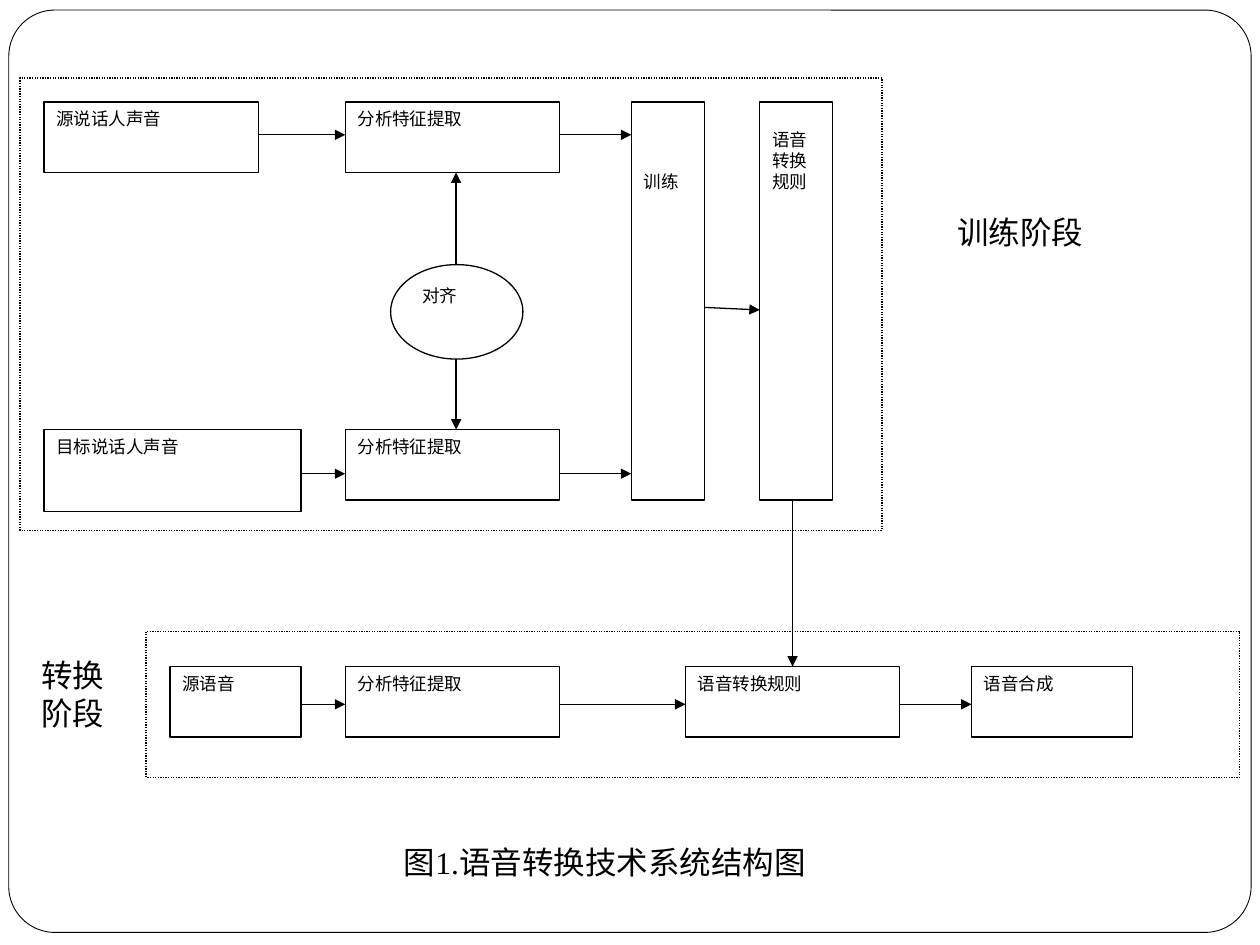
from typing import NamedTuple

from lxml import etree
from pptx import Presentation
from pptx.dml.color import RGBColor
from pptx.enum.dml import MSO_LINE
from pptx.enum.shapes import MSO_CONNECTOR, MSO_SHAPE
from pptx.enum.text import MSO_ANCHOR, MSO_AUTO_SIZE, PP_ALIGN
from pptx.oxml.ns import qn
from pptx.util import Inches, Pt

RECTANGLE = MSO_SHAPE.RECTANGLE
ROUNDED = MSO_SHAPE.ROUNDED_RECTANGLE
OVAL = MSO_SHAPE.OVAL
STRAIGHT = MSO_CONNECTOR.STRAIGHT
DOTTED = MSO_LINE.ROUND_DOT
TOP = MSO_ANCHOR.TOP
GROW = MSO_AUTO_SIZE.SHAPE_TO_FIT_TEXT
LEFT, CENTER, JUSTIFY = PP_ALIGN.LEFT, PP_ALIGN.CENTER, PP_ALIGN.JUSTIFY

BLACK = "000000"
WHITE = "FFFFFF"
BOX_WIDTH = 1.7
BOX_HEIGHT = 0.56
COLUMN_WIDTH = 0.58
COLUMN_HEIGHT = 3.16
SOURCE_TOP, TARGET_TOP, CONVERSION_TOP = 0.81, 3.41, 5.29
SOURCE_FLOW, TARGET_FLOW, CONVERSION_FLOW = 1.07, 3.76, 5.59
START_LEFT, ANALYSIS_LEFT = 0.35, 2.74
TRAINING_LEFT, RULES_LEFT = 5.01, 6.03
CONVERT_LEFT, SYNTHESIS_LEFT = 5.44, 7.71
ANALYSIS_RIGHT = ANALYSIS_LEFT + BOX_WIDTH
ALIGN_X, RULES_X = 3.62, 6.29
LINE_STEP = 0.167


class Step(NamedTuple):
    text: str
    left: float
    top: float
    width: float = BOX_WIDTH
    height: float = BOX_HEIGHT
    kind: int = RECTANGLE
    lines_down: int = 0


class Flow(NamedTuple):
    x1: float
    y1: float
    x2: float
    y2: float


class Label(NamedTuple):
    text: str
    left: float
    top: float
    width: float
    height: float
    align: int = LEFT


STEPS = [
    Step("源说话人声音", START_LEFT, SOURCE_TOP),
    Step("目标说话人声音", START_LEFT, TARGET_TOP, width=2.04, height=0.65),
    *(Step("分析特征提取", ANALYSIS_LEFT, top)
      for top in (SOURCE_TOP, TARGET_TOP, CONVERSION_TOP)),
    Step("对齐", 3.1, 2.1, 1.05, 0.75, OVAL),
    Step("训练", TRAINING_LEFT, SOURCE_TOP, COLUMN_WIDTH, COLUMN_HEIGHT, lines_down=3),
    Step("语音\n转换\n规则", RULES_LEFT, SOURCE_TOP, COLUMN_WIDTH, COLUMN_HEIGHT,
         lines_down=1),
    Step("源语音", 1.35, CONVERSION_TOP, width=1.04),
    Step("语音转换规则", CONVERT_LEFT, CONVERSION_TOP),
    Step("语音合成", SYNTHESIS_LEFT, CONVERSION_TOP, width=1.28),
]

FLOWS = [
    Flow(START_LEFT + BOX_WIDTH, SOURCE_FLOW, ANALYSIS_LEFT, SOURCE_FLOW),
    Flow(2.39, TARGET_FLOW, ANALYSIS_LEFT, TARGET_FLOW),
    Flow(ALIGN_X, 2.1, ALIGN_X, SOURCE_TOP + BOX_HEIGHT),
    Flow(ALIGN_X, 2.85, ALIGN_X, TARGET_TOP),
    Flow(ANALYSIS_RIGHT, SOURCE_FLOW, TRAINING_LEFT, SOURCE_FLOW),
    Flow(ANALYSIS_RIGHT, TARGET_FLOW, TRAINING_LEFT, TARGET_FLOW),
    Flow(TRAINING_LEFT + COLUMN_WIDTH, 2.44, RULES_LEFT, 2.46),
    Flow(RULES_X, SOURCE_TOP + COLUMN_HEIGHT, RULES_X, CONVERSION_TOP),
    Flow(2.39, CONVERSION_FLOW, ANALYSIS_LEFT, CONVERSION_FLOW),
    Flow(ANALYSIS_RIGHT, CONVERSION_FLOW, CONVERT_LEFT, CONVERSION_FLOW),
    Flow(CONVERT_LEFT + BOX_WIDTH, CONVERSION_FLOW, SYNTHESIS_LEFT, CONVERSION_FLOW),
]

LABELS = [
    Label("图1.语音转换技术系统结构图", 1.87, 6.64, 5.86, 0.4, CENTER),
    Label("训练阶段", 7.5, 1.64, 1.41, 0.4),
    Label("转换阶段", 0.23, 5.16, 0.94, 0.71),
]


def color(value: str) -> RGBColor:
    return RGBColor.from_string(value)


def write(frame, text: str, *, size: float, font: str, align: int) -> None:
    frame.word_wrap = True
    frame.vertical_anchor = TOP
    for index, content in enumerate(text.split("\n")):
        paragraph = frame.add_paragraph() if index else frame.paragraphs[0]
        paragraph.alignment = align
        run = paragraph.add_run()
        run.text = content
        run.font.size = Pt(size)
        run.font.name = font
        run.font.color.rgb = color(BLACK)


def add_outline(slide, kind: int, left: float, top: float, width: float,
                height: float, weight: float = 0.75):
    shape = slide.shapes.add_shape(
        kind, Inches(left), Inches(top), Inches(width), Inches(height))
    shape.shadow.inherit = False
    shape.fill.solid()
    shape.fill.fore_color.rgb = color(WHITE)
    shape.line.color.rgb = color(BLACK)
    shape.line.width = Pt(weight)
    return shape


def add_stage(slide, left: float, top: float, width: float, height: float) -> None:
    stage = add_outline(slide, RECTANGLE, left, top, width, height)
    stage.line.dash_style = DOTTED


def add_step(slide, step: Step) -> None:
    box = add_outline(slide, step.kind, step.left, step.top, step.width, step.height)
    box.text_frame.margin_top = Inches(0.05 + step.lines_down * LINE_STEP)
    write(box.text_frame, step.text, size=10, font="Calibri", align=JUSTIFY)


def add_flow(slide, flow: Flow) -> None:
    arrow = slide.shapes.add_connector(STRAIGHT, *(Inches(value) for value in flow))
    arrow.line.color.rgb = color(BLACK)
    arrow.line.width = Pt(0.75)
    etree.SubElement(arrow.line._get_or_add_ln(), qn("a:tailEnd"), type="triangle")
    etree.SubElement(arrow._element.spPr, qn("a:effectLst"))


def add_label(slide, label: Label) -> None:
    box = slide.shapes.add_textbox(
        Inches(label.left), Inches(label.top), Inches(label.width), Inches(label.height))
    write(box.text_frame, label.text, size=18, font="Times New Roman", align=label.align)
    box.text_frame.auto_size = GROW


def main() -> None:
    deck = Presentation()
    deck.slide_width = Inches(10)
    deck.slide_height = Inches(7.5)
    slide = deck.slides.add_slide(deck.slide_layouts[6])

    border = add_outline(slide, ROUNDED, 0.07, 0.08, 9.86, 7.32, weight=0.5)
    border.adjustments[0] = 0.05
    add_stage(slide, 1.16, 5.01, 8.68, 1.16)
    add_stage(slide, 0.16, 0.62, 6.84, 3.59)
    for step in STEPS:
        add_step(slide, step)
    for flow in FLOWS:
        add_flow(slide, flow)
    for label in LABELS:
        add_label(slide, label)
    deck.save("out.pptx")


if __name__ == "__main__":
    main()
